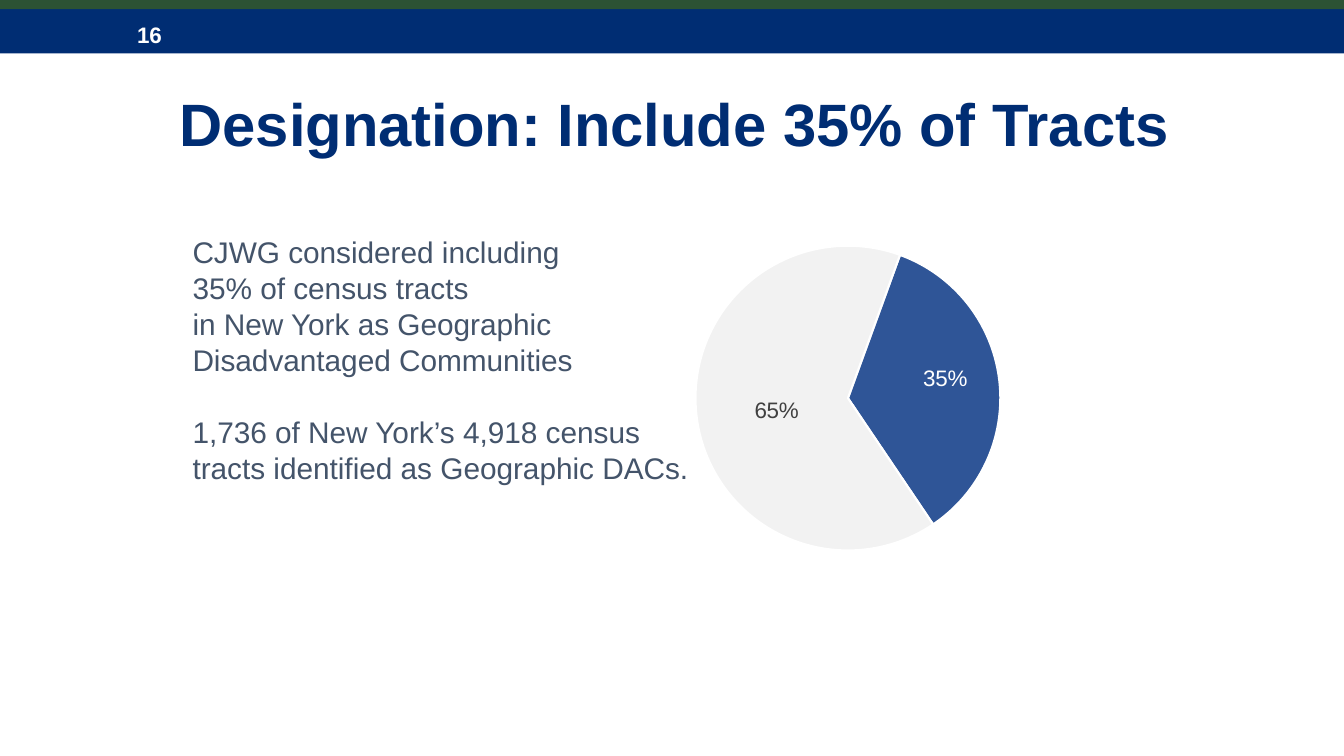
from dataclasses import dataclass

import pptx
import pptx.chart.data
import pptx.dml.color
import pptx.enum.chart
import pptx.enum.shapes
import pptx.enum.text
import pptx.oxml
import pptx.oxml.ns
import pptx.util

RGBColor = pptx.dml.color.RGBColor
NAVY = RGBColor(0x00, 0x2D, 0x73)
GREEN = RGBColor(0x2C, 0x52, 0x34)
SLATE = RGBColor(0x44, 0x54, 0x6A)
BLUE = RGBColor(0x2F, 0x55, 0x97)
PALE = RGBColor(0xF2, 0xF2, 0xF2)
GREY = RGBColor(0x40, 0x40, 0x40)
WHITE = RGBColor(0xFF, 0xFF, 0xFF)
FONT = "Arial"
SCALE = 9144  # EMU in one px, 100 px to the inch


@dataclass
class Box:
    left: int
    top: int
    width: int
    height: int

    def emu(self) -> list[pptx.util.Emu]:
        return [px(n) for n in (self.left, self.top, self.width, self.height)]


@dataclass
class Band:
    box: Box
    color: RGBColor


@dataclass
class Slice:
    name: str
    value: float
    fill: RGBColor
    ink: RGBColor
    shift: tuple[float, float]  # label offset, as a share of the chart


BANDS = [Band(Box(0, 9, 1333, 44), NAVY), Band(Box(0, 0, 1333, 9), GREEN)]
SLICES = [
    Slice("1", 0.35, BLUE, WHITE, (0.05, -0.03)),
    Slice("2", 0.65, PALE, GREY, (0.01, 0.01)),
]
BODY = [
    "CJWG considered including\v35% of census tracts\v"
    "in New York as Geographic Disadvantaged Communities",
    "1,736 of New York’s 4,918 census tracts identified as Geographic DACs.",
]


def px(count: int) -> pptx.util.Emu:
    return pptx.util.Emu(count * SCALE)


def style(font, size: float, color: RGBColor, bold: bool = False) -> None:
    font.name, font.size, font.bold = FONT, pptx.util.Pt(size), bold
    font.color.rgb = color


def write(slide, box: Box, lines: list[str], *, size: float, color: RGBColor,
          bold: bool = False, middle: bool = False, inset: tuple[int, int] = (0, 0),
          leading=None, gap: float = 0) -> None:
    frame = slide.shapes.add_textbox(*box.emu()).text_frame
    frame.word_wrap = True
    frame.margin_left = frame.margin_right = px(inset[0])
    frame.margin_top = frame.margin_bottom = px(inset[1])
    anchor = pptx.enum.text.MSO_ANCHOR
    frame.vertical_anchor = anchor.MIDDLE if middle else anchor.TOP
    for index, line in enumerate(lines):
        para = frame.add_paragraph() if index else frame.paragraphs[0]
        para.text = line
        para.line_spacing = leading
        if index:
            para.space_before = pptx.util.Pt(gap)
        for run in para.runs:
            style(run.font, size, color, bold)


def draw_band(slide, band: Band) -> None:
    kind = pptx.enum.shapes.MSO_SHAPE.RECTANGLE
    shape = slide.shapes.add_shape(kind, *band.box.emu())
    shape.shadow.inherit = False
    shape.fill.solid()
    shape.fill.fore_color.rgb = band.color
    shape.line.fill.background()


def layout(inner: bool = False, **values: float):
    """Build a manual chart layout from x, y, w and h shares."""
    parts = '<c:layoutTarget val="inner"/>' if inner else ""
    if inner:
        parts += '<c:xMode val="edge"/><c:yMode val="edge"/>'
    parts += "".join(f'<c:{key} val="{val}"/>' for key, val in values.items())
    return pptx.oxml.parse_xml(
        f'<c:layout {pptx.oxml.ns.nsdecls("c")}>'
        f"<c:manualLayout>{parts}</c:manualLayout></c:layout>")


def draw_pie(slide, box: Box, slices: list[Slice], start: int) -> None:
    data = pptx.chart.data.CategoryChartData(number_format="0%")
    data.categories = [part.name for part in slices]
    data.add_series("Series 1", [part.value for part in slices])
    kind = pptx.enum.chart.XL_CHART_TYPE.PIE
    chart = slide.shapes.add_chart(kind, *box.emu(), data).chart
    chart.has_legend = chart.has_title = False
    style(chart.font, 16, GREY)
    plot = chart.plots[0]
    plot.vary_by_categories = True
    series = plot.series[0]
    for index, part in enumerate(slices):
        point = series.points[index]
        point.format.fill.solid()
        point.format.fill.fore_color.rgb = part.fill
        point.format.line.color.rgb = WHITE
        point.format.line.width = pptx.util.Pt(1.5)
        label = point.data_label
        style(label.font, 16, part.ink)
        label.position = pptx.enum.chart.XL_LABEL_POSITION.CENTER
    # Label offsets, plot area and first angle
    pie = series._element.getparent()
    for part, label in zip(slices, pie.iter(pptx.oxml.ns.qn("c:dLbl"))):
        label.insert(1, layout(x=part.shift[0], y=part.shift[1]))
    area = pie.getparent()
    for old in area.findall(pptx.oxml.ns.qn("c:layout")):
        area.remove(old)
    area.insert(0, layout(True, x=0.15, y=0.05, w=0.7, h=0.9))
    pie.append(pptx.oxml.parse_xml(
        f'<c:firstSliceAng {pptx.oxml.ns.nsdecls("c")} val="{start}"/>'))


def main() -> None:
    deck = pptx.Presentation()
    deck.slide_width, deck.slide_height = px(1333), px(750)
    slide = deck.slides.add_slide(deck.slide_layouts[6])

    # Header bands and page number
    for band in BANDS:
        draw_band(slide, band)
    write(slide, Box(136, 13, 60, 42), ["16"], size=16, color=WHITE,
          bold=True, middle=True)

    # Title and body
    write(slide, Box(178, 74, 1031, 104), ["Designation: Include 35% of Tracts"],
          size=42.7, color=NAVY, bold=True, middle=True, leading=0.9)
    write(slide, Box(178, 225, 523, 279), BODY, size=21.3, color=SLATE,
          inset=(13, 7), leading=pptx.util.Pt(25.7), gap=25.7)

    # Share of tracts
    draw_pie(slide, Box(625, 225, 432, 340), SLICES, 20)
    deck.save("out.pptx")


if __name__ == "__main__":
    main()
